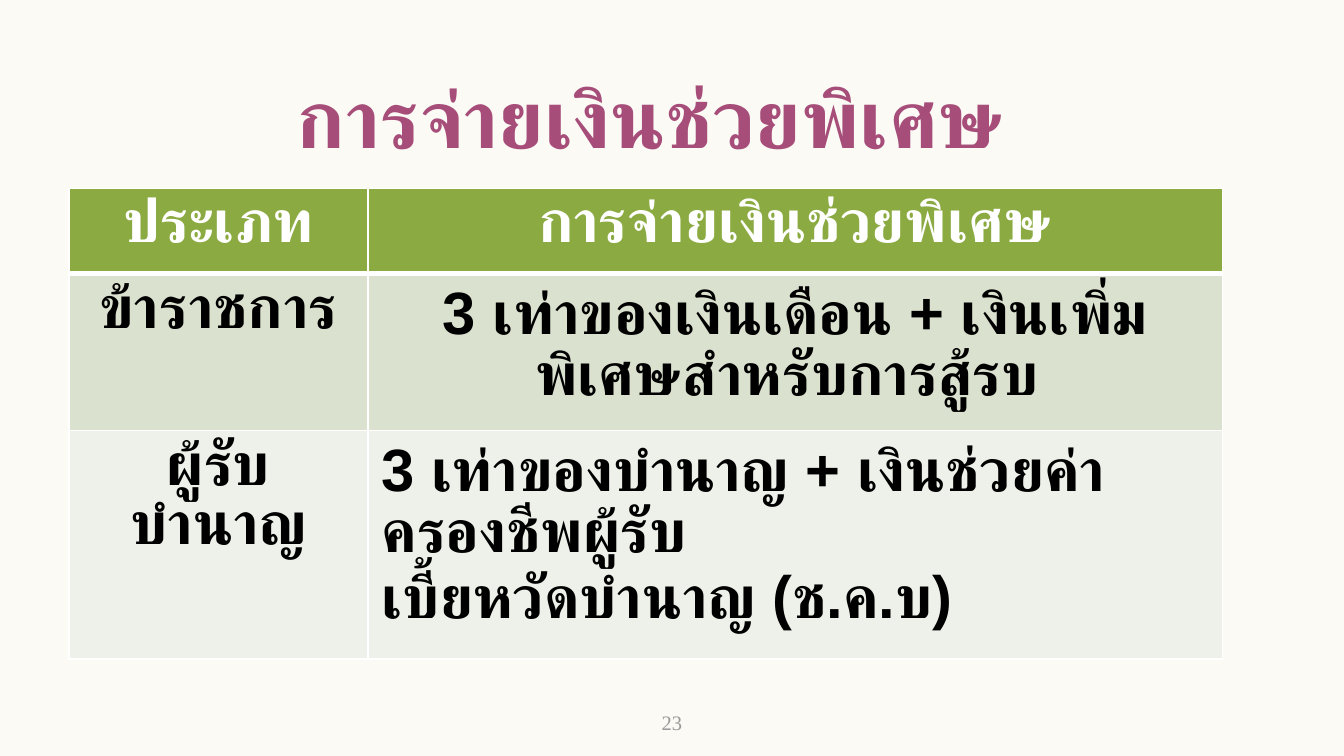
from lxml import etree
from pptx import Presentation
from pptx import util as u
from pptx.dml.color import RGBColor
from pptx.enum import text
from pptx.oxml.ns import qn


def style(paragraph, content, size, color, name="Arial", bold=True, align=text.PP_ALIGN.CENTER):
    """Fill a paragraph and set its alignment and font."""
    paragraph.text = content
    paragraph.alignment = align
    font = paragraph.font
    font.size, font.bold, font.name = u.Pt(size), bold, name
    font.color.rgb = RGBColor.from_string(color)


def add_border(cell, side, width):
    line = etree.Element(qn(f"a:{side}"), w=str(u.Pt(width)))
    fill = etree.SubElement(line, qn("a:solidFill"))
    etree.SubElement(fill, qn("a:srgbClr"), val="FFFFFF")
    cell._tc.get_or_add_tcPr().append(line)


presentation = Presentation()
presentation.slide_width = u.Cm(25.4)
presentation.slide_height = u.Cm(14.29)
slide = presentation.slides.add_slide(presentation.slide_layouts[6])
slide.background.fill.solid()
slide.background.fill.fore_color.rgb = RGBColor.from_string("FBFAF5")

# Title and page number
for content, box, anchor, size, color, name, bold in [
    ("การจ่ายเงินช่วยพิเศษ", (1.5, 0.94, 21.59, 2.49), text.MSO_ANCHOR.MIDDLE,
     44, "A64D79", "Arial", True),
    ("23", (11.94, 13.18, 1.52, 0.69), text.MSO_ANCHOR.TOP,
     11, "999999", "Times New Roman", False),
]:
    frame = slide.shapes.add_textbox(*map(u.Cm, box)).text_frame
    frame.word_wrap = True
    frame.vertical_anchor = anchor
    frame.margin_left = frame.margin_right = u.Cm(0.25)
    frame.margin_top = frame.margin_bottom = u.Cm(0.25)
    style(frame.paragraphs[0], content, size, color, name, bold)

# Payment table; rows grow to fit their text
rows = [
    ("8BAB42", "FFFFFF", ["ประเภท", "การจ่ายเงินช่วยพิเศษ"]),
    ("DAE2CF", "000000", ["ข้าราชการ", "3 เท่าของเงินเดือน + เงินเพิ่มพิเศษสำหรับการสู้รบ "]),
    ("EEF1E9", "000000", ["ผู้รับบำนาญ", "3 เท่าของบำนาญ + เงินช่วยค่าครองชีพผู้รับ\nเบี้ยหวัดบำนาญ (ช.ค.บ)"]),
]
table = slide.shapes.add_table(3, 2, u.Cm(1.3), u.Cm(3.56), u.Cm(21.8), u.Cm(6.17)).table
for column, width in zip(table.columns, (5.66, 16.14)):
    column.width = u.Cm(width)
for row, height in zip(table.rows, (1.47, 1.04, 1.04)):
    row.height = u.Cm(height)

for row_index, (fill, color, contents) in enumerate(rows):
    for column_index, content in enumerate(contents):
        cell = table.cell(row_index, column_index)
        for side in ("lnL", "lnR", "lnT", "lnB"):
            header_edge = (row_index, side) in [(0, "lnB"), (1, "lnT")]
            add_border(cell, side, 3 if header_edge else 1)
        cell.fill.solid()
        cell.fill.fore_color.rgb = RGBColor.from_string(fill)
        lines = content.split("\n")
        align = text.PP_ALIGN.LEFT if len(lines) > 1 else text.PP_ALIGN.CENTER
        for index, line in enumerate(lines):
            frame = cell.text_frame
            paragraph = frame.add_paragraph() if index else frame.paragraphs[0]
            style(paragraph, line, 32, color, align=align)

presentation.save("out.pptx")
